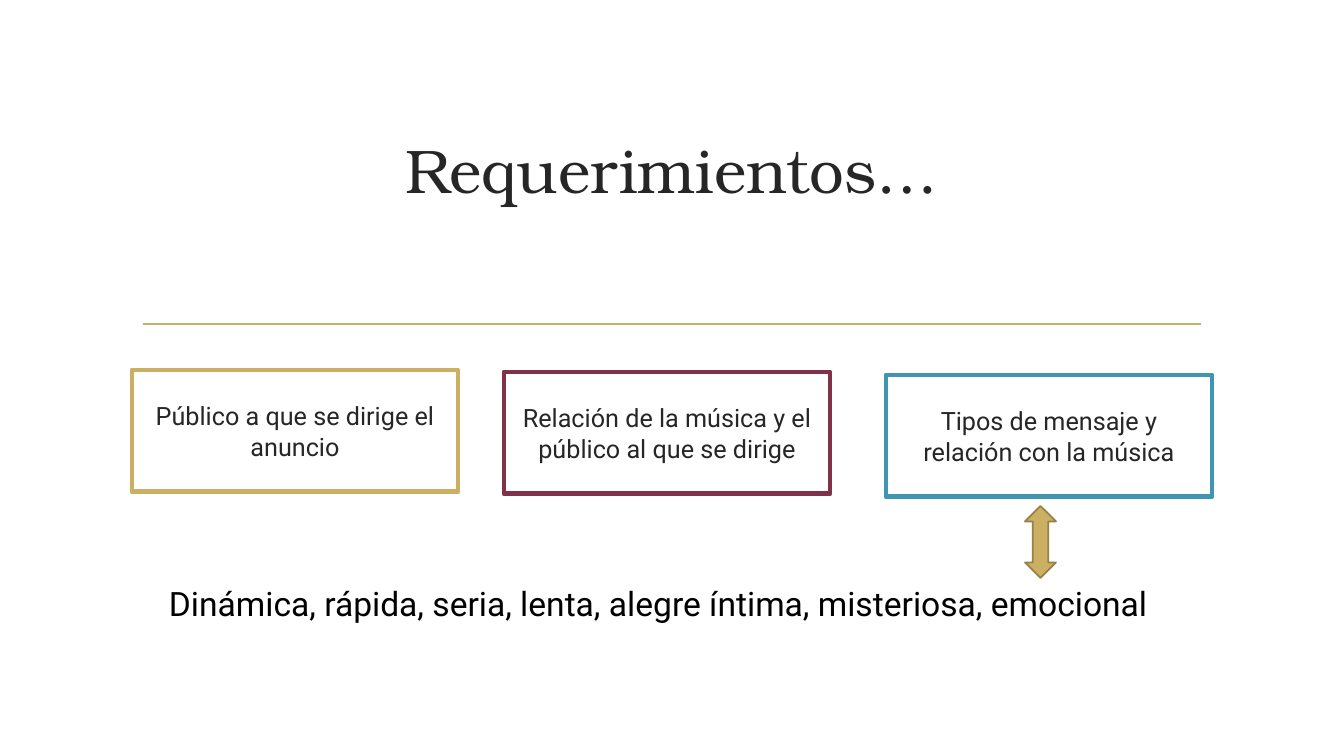
import pptx
import pptx.util
import pptx.dml.color
import pptx.enum.shapes
import pptx.enum.text
import pptx.oxml.ns
import lxml.etree

PX = 914400 / 100.8
SHAPE = pptx.enum.shapes.MSO_SHAPE
ALIGN = pptx.enum.text.PP_ALIGN
ANCHOR = pptx.enum.text.MSO_ANCHOR
GOLD, WINE, TEAL, OCHRE = "CBAF62", "803348", "4096B0", "968149"
DARK, BLACK = "262626", "000000"


def px(*lengths):
    return [pptx.util.Emu(round(n * PX)) for n in lengths]


def color(value):
    return pptx.dml.color.RGBColor.from_string(value)


def set_attrs(obj, values):
    for name, value in values.items():
        setattr(obj, name, value)


def set_line(sp, value, width):
    sp.line.color.rgb = color(value)
    sp.line.width = pptx.util.Pt(width)


def set_text(sp, text, font, size, ink, align, anchor):
    tf = sp.text_frame
    set_attrs(tf, {"word_wrap": True, "vertical_anchor": anchor})
    p = tf.paragraphs[0]
    p.alignment = align
    r = p.add_run()
    r.text = text
    set_attrs(r.font, {"name": font, "size": pptx.util.Pt(size)})
    r.font.color.rgb = color(ink)
    return p


def add_heading(s, x, y, w, h):
    sp = s.shapes.add_textbox(*px(x, y, w, h))
    set_text(sp, "Requerimientos…", "TeX Gyre Bonum", 44, DARK, ALIGN.CENTER, ANCHOR.BOTTOM)


def add_rule(s, x, y, w):
    sp = s.shapes.add_connector(pptx.enum.shapes.MSO_CONNECTOR.STRAIGHT, *px(x, y, x + w, y))
    set_line(sp, GOLD, 1.25)
    lxml.etree.SubElement(sp._element.spPr, pptx.oxml.ns.qn("a:effectLst"))


def add_requirement(s, x, y, w, h, text, border):
    sp = s.shapes.add_shape(SHAPE.RECTANGLE, *px(x, y, w, h))
    sp.shadow.inherit = False
    sp.fill.background()
    set_line(sp, border, 3.5)
    p = set_text(sp, text, "Roboto", 18, DARK, ALIGN.CENTER, ANCHOR.MIDDLE)
    p.space_after = pptx.util.Pt(6)


def add_moods(s, x, y, w, h):
    sp = s.shapes.add_textbox(*px(x, y, w, h))
    text = "Dinámica, rápida, seria, lenta, alegre íntima, misteriosa, emocional"
    set_text(sp, text, "Roboto", 24, BLACK, ALIGN.LEFT, ANCHOR.TOP)


def add_arrow(s, x, y, w, h):
    sp = s.shapes.add_shape(SHAPE.UP_DOWN_ARROW, *px(x, y, w, h))
    sp.shadow.inherit = False
    sp.fill.solid()
    sp.fill.fore_color.rgb = color(GOLD)
    set_line(sp, OCHRE, 1.25)


def main():
    prs = pptx.Presentation()
    prs.slide_width, prs.slide_height = px(1344, 756)
    s = prs.slides.add_slide(prs.slide_layouts[6])
    add_rule(s, 143, 324, 1058)
    add_heading(s, 143, 108, 1058, 103)
    requirements = [
        (132, 370, "Público a que se dirige el anuncio", GOLD),
        (504, 372, "Relación de la música y el público al que se dirige", WINE),
        (886, 375, "Tipos de mensaje y relación con la música", TEAL),
    ]
    for x, y, text, border in requirements:
        add_requirement(s, x, y, 326, 122, text, border)
    add_moods(s, 159, 578, 1060, 50)
    add_arrow(s, 1025, 506, 31, 72)
    prs.save("out.pptx")


if __name__ == "__main__":
    main()
